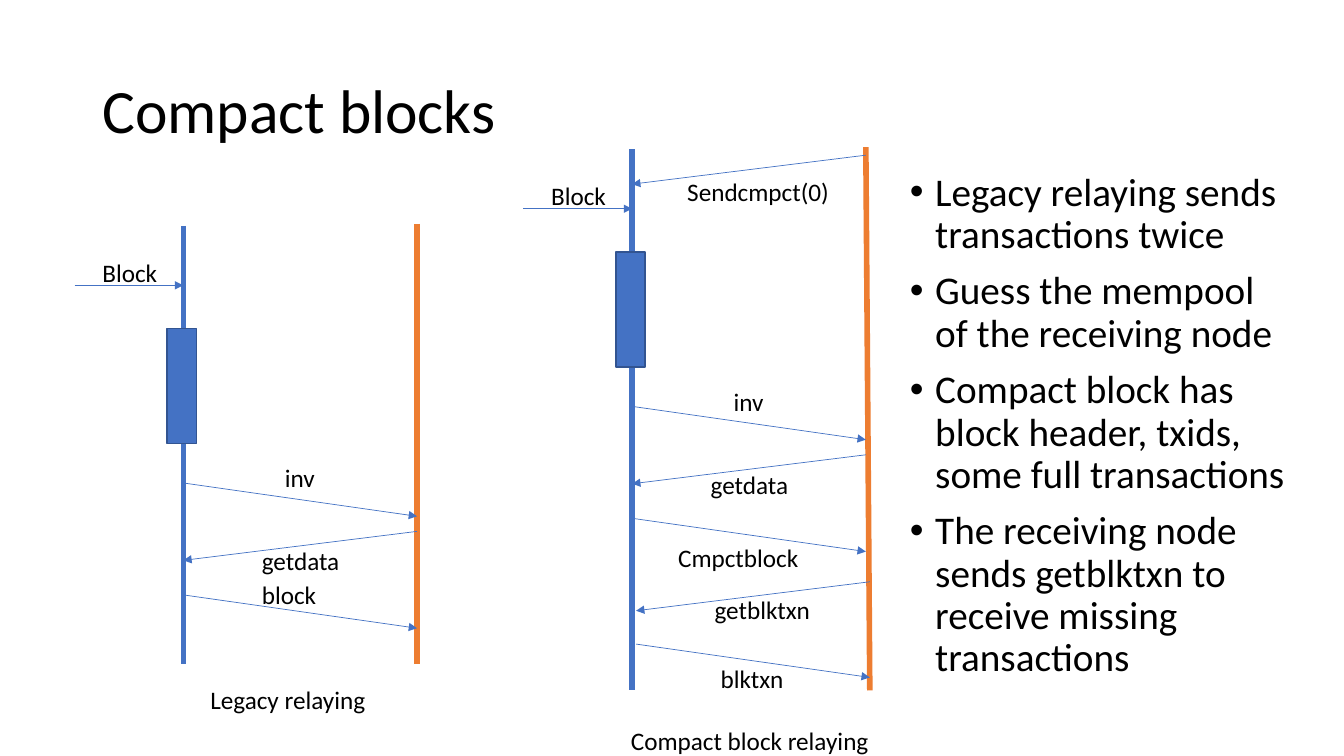
from dataclasses import dataclass

import pptx
import pptx.dml.color
import pptx.enum.shapes
import pptx.enum.text
import pptx.oxml
import pptx.oxml.ns
import pptx.util
from pptx.util import Cm, Pt

BLUE, ORANGE, OUTLINE, BLACK = "4472C4", "ED7D31", "325491", "000000"
SPAN = 5.89  # distance between the two nodes
LABEL_HEIGHT = 1.02


@dataclass
class Message:
    """An arrow between the nodes; the label is placed from its start height."""
    text: str
    y: float
    label_x: float
    label_dy: float
    label_width: float
    reply: bool = False
    shift: float = 0


@dataclass
class Diagram:
    """Positions are relative to where the block reaches the sender."""
    x: float
    y: float
    bottom: float
    lean: float
    messages: list[Message]
    caption: str
    caption_x: float
    caption_y: float
    caption_width: float


INV = Message("inv", 4.98, 2.31, -0.64, 1.27)
GETDATA = Message("getdata", 6.2, 1.73, 0.23, 2.49, reply=True)

DIAGRAMS = [
    Diagram(4.62, 7.19, 9.55, 0, [
        INV,
        GETDATA,
        Message("block", 7.8, 1.73, -0.51, 1.91),
    ], "Legacy relaying", 0.43, 9.93, 4.47),
    Diagram(15.93, 5.26, 12.14, 0.1, [
        Message("Sendcmpct(0)", -1.35, 1.14, 0.41, 4.29, reply=True),
        INV,
        GETDATA,
        Message("Cmpctblock", 7.8, 0.91, 0.48, 4.17),
        Message("getblktxn", 9.4, 1.83, 0.2, 3.28, reply=True, shift=0.1),
        Message("blktxn", 10.97, 1.98, 0.36, 2.59, shift=0.1),
    ], "Compact block relaying", -0.28, 12.9, 6.58),
]

BULLETS = [
    "Legacy relaying sends transactions twice",
    "Guess the mempool of the receiving node",
    "Compact block has block header, txids, some full transactions",
    "The receiving node sends getblktxn to receive missing transactions",
]


def color(value: str) -> pptx.dml.color.RGBColor:
    return pptx.dml.color.RGBColor.from_string(value)


def apply_format(target, values: dict) -> None:
    for name, value in values.items():
        setattr(target, name, value)


def add_text(slide, left: float, top: float, width: float, height: float,
             lines: list[str], size: float, frame_format: dict,
             paragraph_format: dict):
    shape = slide.shapes.add_textbox(Cm(left), Cm(top), Cm(width), Cm(height))
    frame = shape.text_frame
    frame.text = "\n".join(lines)
    apply_format(frame, frame_format)
    for paragraph in frame.paragraphs:
        apply_format(paragraph, paragraph_format)
        for run in paragraph.runs:
            apply_format(run.font, {"name": "Calibri", "size": Pt(size)})
            run.font.color.rgb = color(BLACK)
    return shape


def add_label(slide, left: float, top: float, width: float, text: str,
              wrap: bool = True) -> None:
    add_text(slide, left, top, width, LABEL_HEIGHT, [text], 18, {
        "word_wrap": wrap,
        "auto_size": pptx.enum.text.MSO_AUTO_SIZE.SHAPE_TO_FIT_TEXT,
    }, {})


def add_line(slide, start: tuple[float, float], end: tuple[float, float],
             line_color: str, width: float, arrow: bool = False) -> None:
    connector = slide.shapes.add_connector(
        pptx.enum.shapes.MSO_CONNECTOR.STRAIGHT,
        Cm(start[0]), Cm(start[1]), Cm(end[0]), Cm(end[1]))
    connector.line.color.rgb = color(line_color)
    connector.line.width = Pt(width)
    qn = pptx.oxml.ns.qn
    properties = connector._element.spPr
    if arrow:
        tail = properties.find(qn("a:ln")).makeelement(
            qn("a:tailEnd"), {"type": "triangle"})
        properties.find(qn("a:ln")).append(tail)
    properties.append(properties.makeelement(qn("a:effectLst"), {}))


def add_diagram(slide, diagram: Diagram) -> None:
    x, y = diagram.x, diagram.y
    receiver = x + SPAN

    # Node lifelines
    add_line(slide, (x, y - 1.5), (x, y + diagram.bottom), BLUE, 4)
    add_line(slide, (receiver, y - 1.55),
             (receiver + diagram.lean, y + diagram.bottom), ORANGE, 4)

    # Incoming block and its processing
    add_line(slide, (x - 2.74, y), (x, y), BLUE, 0.5, arrow=True)
    add_label(slide, x - 2.29, y - 0.84, 1.91, "Block", wrap=False)
    box = slide.shapes.add_shape(pptx.enum.shapes.MSO_SHAPE.RECTANGLE,
                                 Cm(x - 0.41), Cm(y + 1.09), Cm(0.74), Cm(2.9))
    box.shadow.inherit = False
    box.fill.solid()
    box.fill.fore_color.rgb = color(BLUE)
    box.line.color.rgb = color(OUTLINE)
    box.line.width = Pt(1)

    # Messages
    for message in diagram.messages:
        top = y + message.y
        start, end = x + message.shift, receiver + message.shift
        drop = 0.84
        if message.reply:
            start, end, drop = end, start, 0.73
        add_line(slide, (start, top), (end, top + drop), BLUE, 0.5, arrow=True)
        add_label(slide, x + message.label_x, top + message.label_dy,
                  message.label_width, message.text)

    add_label(slide, x + diagram.caption_x, y + diagram.caption_y,
              diagram.caption_width, diagram.caption, wrap=False)


def add_bullets(slide) -> None:
    shape = add_text(slide, 22.68, 4.22, 10.08, 13.64, BULLETS, 28,
                     {"word_wrap": True},
                     {"line_spacing": 0.9, "space_before": Pt(10)})
    for paragraph in shape.text_frame.paragraphs:
        properties = paragraph._p.get_or_add_pPr()
        properties.set("marL", str(Cm(0.64)))
        properties.set("indent", str(Cm(-0.64)))
        for tag, key, value in (("a:buFont", "typeface", "Arial"),
                                ("a:buChar", "char", "•")):
            properties.append(properties.makeelement(
                pptx.oxml.ns.qn(tag), {key: value}))


def main() -> None:
    presentation = pptx.Presentation()
    apply_format(presentation,
                 {"slide_width": Cm(33.87), "slide_height": Cm(19.05)})
    slide = presentation.slides.add_slide(presentation.slide_layouts[6])

    # Title
    add_text(slide, 2.33, 1.01, 29.21, 3.68, ["Compact blocks"], 44, {
        "word_wrap": True,
        "vertical_anchor": pptx.enum.text.MSO_ANCHOR.MIDDLE,
    }, {"line_spacing": 0.9})

    # Sequence diagrams and key points
    for diagram in DIAGRAMS:
        add_diagram(slide, diagram)
    add_bullets(slide)

    presentation.save("out.pptx")


if __name__ == "__main__":
    main()
